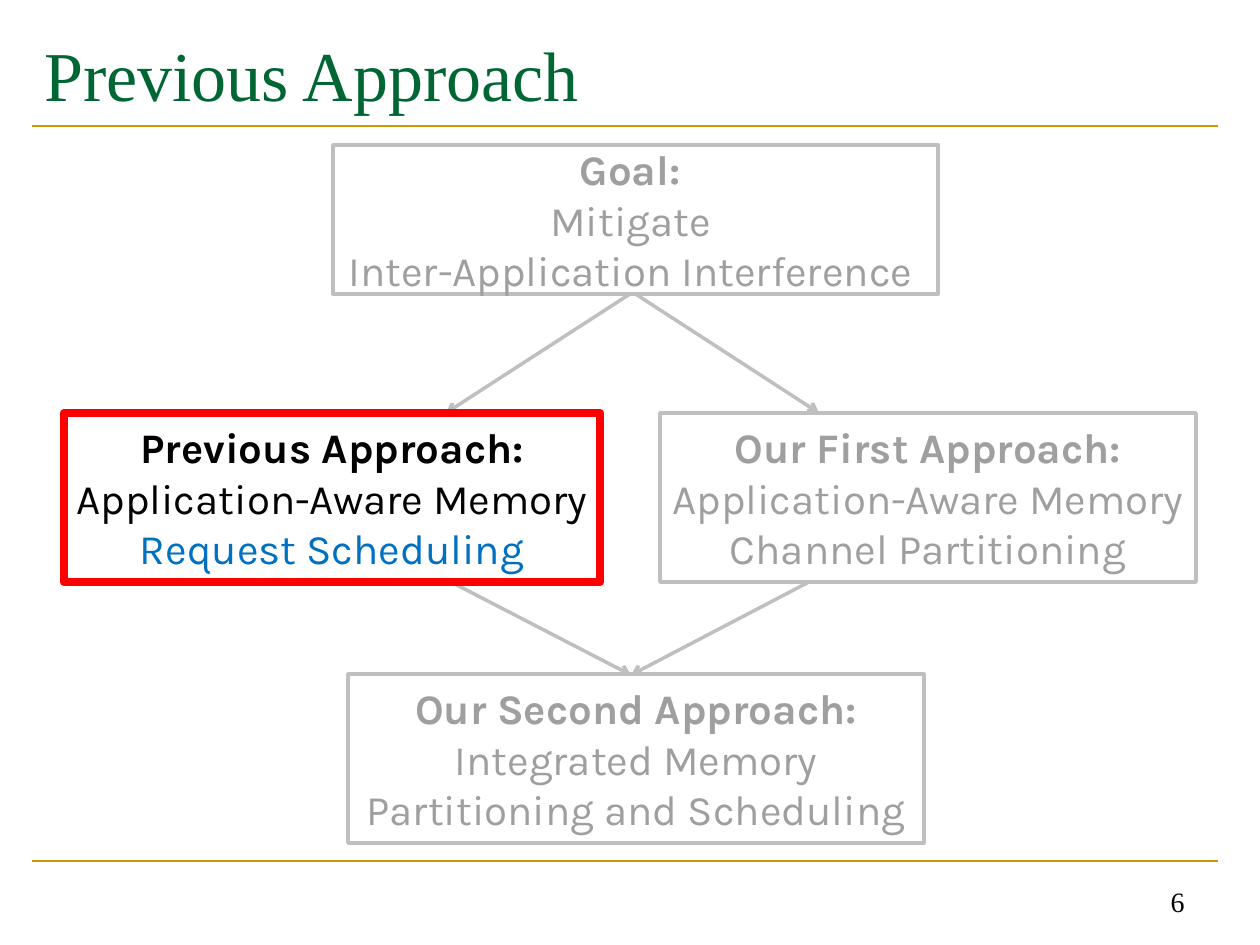
from lxml import etree
from pptx import Presentation
from pptx.dml.color import RGBColor
from pptx.enum.shapes import MSO_CONNECTOR, MSO_SHAPE
from pptx.enum.text import MSO_ANCHOR, PP_ALIGN
from pptx.oxml.ns import qn
from pptx.util import Emu, Pt

STRAIGHT = MSO_CONNECTOR.STRAIGHT
RECTANGLE = MSO_SHAPE.RECTANGLE
MIDDLE, BOTTOM = MSO_ANCHOR.MIDDLE, MSO_ANCHOR.BOTTOM
LEFT, CENTER, RIGHT = PP_ALIGN.LEFT, PP_ALIGN.CENTER, PP_ALIGN.RIGHT

GOLD = RGBColor(0xCC, 0x99, 0x00)
GREEN = RGBColor(0x00, 0x66, 0x33)
BLACK = RGBColor(0x00, 0x00, 0x00)
RED = RGBColor(0xFF, 0x00, 0x00)
BLUE = RGBColor(0x00, 0x70, 0xC0)
LIGHT_GRAY = RGBColor(0xBF, 0xBF, 0xBF)
TEXT_GRAY = RGBColor(0x9F, 0x9F, 0x9F)

PX = 914400 / 126


def px(*lengths):
    return [Emu(round(length * PX)) for length in lengths]


def add_line(start, end, color, width):
    line = page.shapes.add_connector(STRAIGHT, *px(*start, *end))
    line.line.color.rgb = color
    line.line.width = Pt(width)
    etree.SubElement(line._element.spPr, qn("a:effectLst"))
    return line


deck = Presentation()
deck.slide_width, deck.slide_height = px(1260, 945)
page = deck.slides.add_slide(deck.slide_layouts[6])

for y in (861, 126):
    add_line((32, y), (1218, y), GOLD, 1.5)

labels = [
    ("Previous Approach", (32, 21, 1187, 105), 40, GREEN, MIDDLE, LEFT),
    ("6", (903, 861, 294, 63), 16, BLACK, BOTTOM, RIGHT),
]
for text, place, size, color, anchor, align in labels:
    box = page.shapes.add_textbox(*px(*place))
    box.text_frame.word_wrap = True
    box.text_frame.vertical_anchor = anchor
    para = box.text_frame.paragraphs[0]
    para.text = text
    para.alignment = align
    para.font.name = "Times New Roman"
    para.font.size = Pt(size)
    para.font.color.rgb = color

arrows = []
for start, end in [
    ((630, 294), (446, 413)),
    ((635, 294), (819, 413)),
    ((451, 582), (631, 675)),
    ((809, 582), (631, 675)),
]:
    arrow = add_line(start, end, LIGHT_GRAY, 2)
    etree.SubElement(arrow.line._get_or_add_ln(), qn("a:tailEnd"), type="arrow")
    arrows.append(arrow)

steps = [
    ((660, 413, 536, 169), LIGHT_GRAY, 2, TEXT_GRAY, [
        [("Our First Approach:", True, None)],
        [("Application-Aware Memory Channel Partitioning", False, None)],
    ]),
    ((348, 674, 576, 169), LIGHT_GRAY, 2, TEXT_GRAY, [
        [("Our Second Approach:", True, None),
         (" Integrated Memory Partitioning and Scheduling", False, None)],
    ]),
    ((64, 413, 536, 169), RED, 5, BLACK, [
        [("Previous Approach:", True, None)],
        [("Application-Aware Memory ", False, None), ("Request Scheduling", False, BLUE)],
    ]),
    ((333, 145, 605, 149), LIGHT_GRAY, 2, TEXT_GRAY, [
        [("Goal: ", True, None)],
        [("Mitigate ", False, None)],
        [("Inter-Application Interference ", False, None)],
    ]),
]
for place, outline, width, color, lines in steps:
    box = page.shapes.add_shape(RECTANGLE, *px(*place))
    box.shadow.inherit = False
    box.fill.background()
    box.line.color.rgb = outline
    box.line.width = Pt(width)
    frame = box.text_frame
    frame.word_wrap = True
    frame.vertical_anchor = MIDDLE
    for index, spans in enumerate(lines):
        para = frame.add_paragraph() if index else frame.paragraphs[0]
        para.alignment = CENTER
        para.font.name = "Karla"
        para.font.size = Pt(24)
        para.font.color.rgb = color
        for text, bold, accent in spans:
            span = para.add_run()
            span.text = text
            span.font.bold = bold
            if accent:
                span.font.color.rgb = accent

goal = box
arrows[1].begin_connect(goal, 2)

deck.save("out.pptx")
